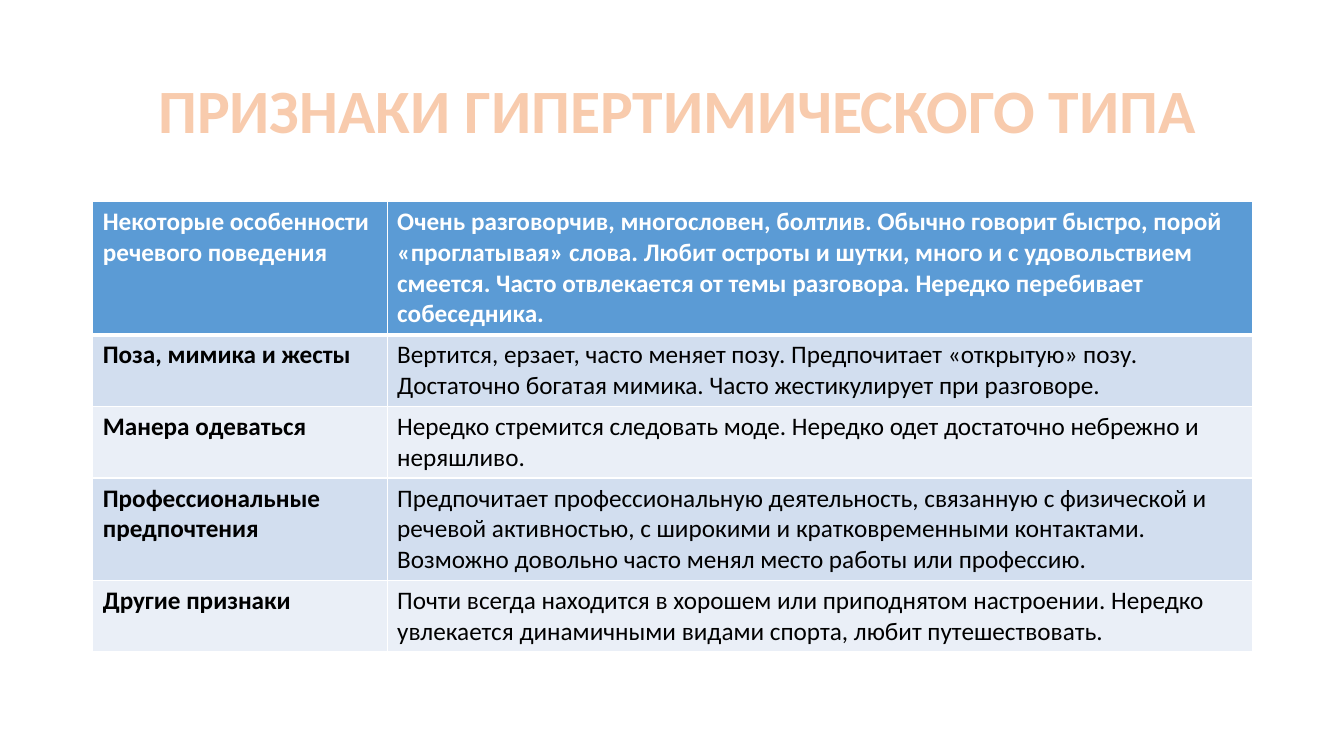
from lxml import etree
from pptx import Presentation
from pptx.dml.color import RGBColor
from pptx.enum.text import MSO_ANCHOR, MSO_AUTO_SIZE, PP_ALIGN
from pptx.oxml import parse_xml
from pptx.oxml.ns import nsdecls
from pptx.util import Pt

PX = 9144  # 100 px to the inch
PEACH = RGBColor(0xF8, 0xCB, 0xAD)
ORANGE = RGBColor(0xED, 0x7D, 0x31)
BLUE = RGBColor(0x5B, 0x9B, 0xD5)
BANDS = [RGBColor(0xEA, 0xEF, 0xF7), RGBColor(0xD2, 0xDE, 0xEF)]
WHITE = RGBColor(0xFF, 0xFF, 0xFF)
BLACK = RGBColor(0, 0, 0)

# sign, description, lines of text
ROWS = [
    ("Некоторые особенности речевого поведения",
     "Очень разговорчив, многословен, болтлив. Обычно говорит быстро, порой "
     "«проглатывая» слова. Любит остроты и шутки, много и с удовольствием смеется. "
     "Часто отвлекается от темы разговора. Нередко перебивает собеседника.", 4),
    ("Поза, мимика и жесты",
     "Вертится, ерзает, часто меняет позу. Предпочитает «открытую» позу. "
     "Достаточно богатая мимика. Часто жестикулирует при разговоре.", 2),
    ("Манера одеваться",
     "Нередко стремится следовать моде. Нередко одет достаточно небрежно и "
     "неряшливо.", 2),
    ("Профессиональные предпочтения",
     "Предпочитает профессиональную деятельность, связанную с физической и речевой "
     "активностью, с широкими и кратковременными контактами. Возможно довольно часто "
     "менял место работы или профессию.", 3),
    ("Другие признаки",
     "Почти всегда находится в хорошем или приподнятом настроении. Нередко "
     "увлекается динамичными видами спорта, любит путешествовать.", 2),
]


def write(tf, text, size, color, bold=True):
    p = tf.paragraphs[0]
    p.alignment = PP_ALIGN.LEFT
    r = p.add_run()
    r.text = text
    r.font.name = "Calibri"
    r.font.size = Pt(size)
    r.font.bold = bold
    r.font.color.rgb = color
    return p, r


def line_xml(tag, color, width):
    return parse_xml(
        f'<a:{tag} {nsdecls("a")} w="{Pt(width)}"><a:solidFill>'
        f'<a:srgbClr val="{color}"/></a:solidFill></a:{tag}>')


prs = Presentation()
prs.slide_width, prs.slide_height = 1333 * PX, 750 * PX
s = prs.slides.add_slide(prs.slide_layouts[5])

title = s.shapes.title
title.left, title.top, title.width, title.height = 92 * PX, 40 * PX, 1150 * PX, 145 * PX
tf = title.text_frame
tf.word_wrap = True
tf.auto_size = MSO_AUTO_SIZE.NONE
tf.vertical_anchor = MSO_ANCHOR.MIDDLE
tf.margin_left = 65 * PX
p, r = write(tf, "ПРИЗНАКИ ГИПЕРТИМИЧЕСКОГО ТИПА", 44, PEACH)
p.line_spacing = 0.9
r.font.fill  # the outline goes before the fill
r.font._element.insert(0, line_xml("ln", ORANGE, 1.75))

table = s.shapes.add_table(len(ROWS), 2, 92 * PX, 200 * PX, 1150 * PX, 440 * PX).table
table.columns[0].width = 292 * PX
table.columns[1].width = 858 * PX
for i, (sign, description, lines) in enumerate(ROWS):
    table.rows[i].height = (10 + 30 * lines) * PX
    header = i == 0
    for j, text in enumerate((sign, description)):
        cell = table.cell(i, j)
        cell.fill.solid()
        cell.fill.fore_color.rgb = BLUE if header else BANDS[i % 2]
        write(cell.text_frame, text, 18, WHITE if header else BLACK, header or j == 0)
        borders = {"lnL": 1, "lnR": 1, "lnT": 3 if i == 1 else 1, "lnB": 3 if header else 1}
        tc_pr = cell._tc.get_or_add_tcPr()
        for k, (side, width) in enumerate(borders.items()):
            tc_pr.insert(k, line_xml(side, WHITE, width))

prs.save("out.pptx")
